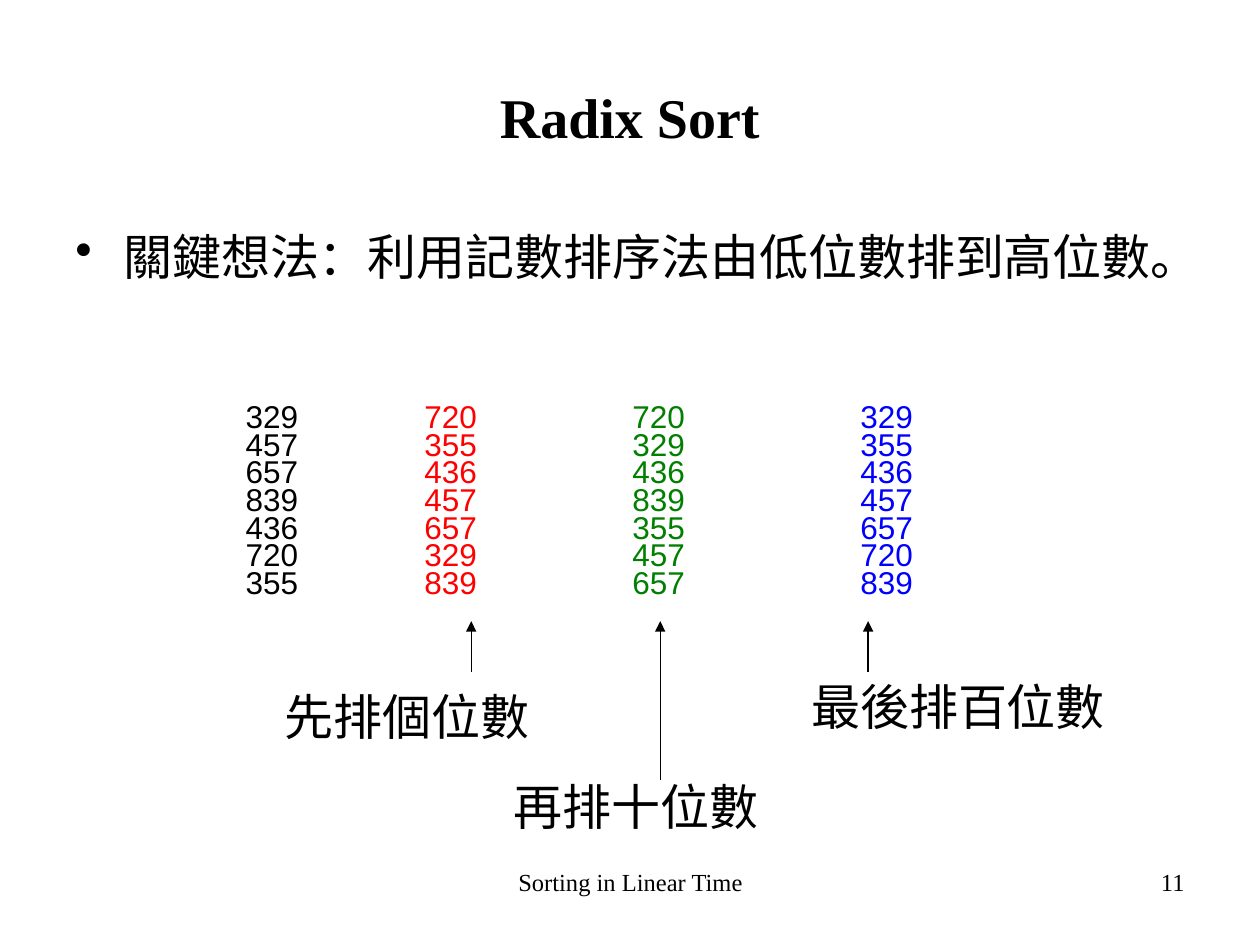
from lxml import etree
from pptx import Presentation
from pptx.dml.color import RGBColor
from pptx.enum.shapes import MSO_CONNECTOR
from pptx.enum.text import MSO_ANCHOR, MSO_AUTO_SIZE, PP_ALIGN
from pptx.oxml.ns import qn
from pptx.util import Inches, Pt

LEFT, CENTER, RIGHT = PP_ALIGN.LEFT, PP_ALIGN.CENTER, PP_ALIGN.RIGHT
TOP, MIDDLE = MSO_ANCHOR.TOP, MSO_ANCHOR.MIDDLE
GROW = MSO_AUTO_SIZE.SHAPE_TO_FIT_TEXT
STRAIGHT = MSO_CONNECTOR.STRAIGHT

SERIF, SANS = "Times New Roman", "Arial"
BLACK, RED, GREEN, BLUE = "000000", "FF0000", "007F00", "0000FF"

COLUMNS = [
    (1.85, BLACK, "329 457 657 839 436 720 355"),
    (3.27, RED, "720 355 436 457 657 329 839"),
    (4.92, GREEN, "720 329 436 839 355 457 657"),
    (6.73, BLUE, "329 355 436 457 657 720 839"),
]
STEPS = [
    ("先排個位數", 2.16, 5.4, 2.2, 3.74, 5.33),
    ("再排十位數", 3.98, 6.11, 2.2, 5.24, 6.19),
    ("最後排百位數", 6.34, 5.32, 2.68, 6.89, 5.33),
]
ARROW_TOP = 4.93


def color(value):
    return RGBColor.from_string(value)


class SlideBuilder:
    def __init__(self, slide):
        self.slide = slide

    def text(self, lines, left, top, width, height, size, font=SERIF,
             fill=BLACK, bold=False, align=LEFT, anchor=TOP):
        shape = self.slide.shapes.add_textbox(
            Inches(left), Inches(top), Inches(width), Inches(height))
        frame = shape.text_frame
        frame.word_wrap = True
        frame.vertical_anchor = anchor
        frame.text = "\n".join(lines)
        for paragraph in frame.paragraphs:
            paragraph.alignment = align
            paragraph.font.name = font
            paragraph.font.size = Pt(size)
            paragraph.font.bold = bold
            paragraph.font.color.rgb = color(fill)
        return frame

    def bullet(self, line, *box, size):
        paragraph = self.text([line], *box, size).paragraphs[0]
        properties = paragraph._p.get_or_add_pPr()
        properties.set("marL", str(Inches(0.38)))
        properties.set("indent", str(Inches(-0.38)))
        mark = etree.Element(qn("a:buChar"), char="•")
        properties.insert(0, mark)

    def number_column(self, numbers, left, fill):
        frame = self.text(numbers, left, 3.28, 1.18, 1.64, 18, SANS, fill)
        frame.auto_size = GROW
        for index, paragraph in enumerate(frame.paragraphs):
            paragraph.line_spacing = 0.3
            paragraph.space_before = Pt(9.3 if index else 0)

    def label(self, line, left, top, width):
        frame = self.text([line], left, top, width, 0.57, 28, SANS)
        frame.auto_size = GROW

    def up_arrow(self, x, bottom, top):
        connector = self.slide.shapes.add_connector(
            STRAIGHT, Inches(x), Inches(bottom), Inches(x), Inches(top))
        connector.line.color.rgb = color(BLACK)
        connector.line.width = Pt(0.75)
        etree.SubElement(connector.line._get_or_add_ln(), qn("a:tailEnd"),
                         type="triangle")
        etree.SubElement(connector._element.spPr, qn("a:effectLst"))


def main():
    presentation = Presentation()
    presentation.slide_width = Inches(10)
    presentation.slide_height = Inches(7.5)
    slide = presentation.slides.add_slide(presentation.slide_layouts[6])
    builder = SlideBuilder(slide)

    builder.text(["Sorting in Linear Time"], 3.42, 6.83, 3.17, 0.52, 14,
                 align=CENTER)
    builder.text(["11"], 7.17, 6.83, 2.33, 0.52, 14, align=RIGHT)
    builder.text(["Radix Sort"], 0.5, 0.3, 9, 1.25, 32, bold=True,
                 align=CENTER, anchor=MIDDLE)
    builder.bullet("關鍵想法：利用記數排序法由低位數排到高位數。",
                   0.5, 1.75, 9, 4.95, size=28)
    for left, fill, numbers in COLUMNS:
        builder.number_column(numbers.split(), left, fill)
    for line, left, top, width, arrow_x, arrow_bottom in STEPS:
        builder.up_arrow(arrow_x, arrow_bottom, ARROW_TOP)
        builder.label(line, left, top, width)

    presentation.save("out.pptx")


if __name__ == "__main__":
    main()
